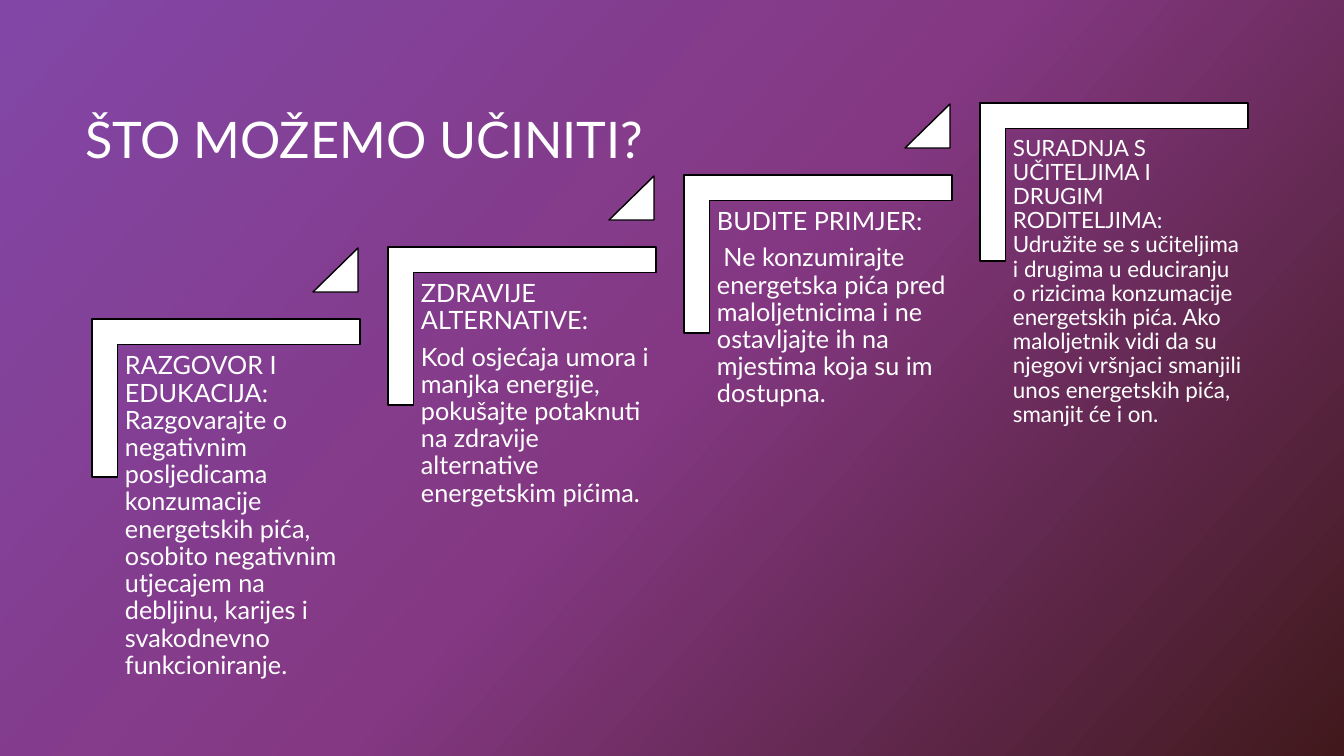
from copy import deepcopy

from pptx import Presentation
from pptx.dml.color import RGBColor
from pptx.enum.shapes import MSO_SHAPE
from pptx.enum.text import MSO_ANCHOR, MSO_AUTO_SIZE, PP_ALIGN
from pptx.oxml.ns import qn
from pptx.util import Pt

CORNER, TRIANGLE = MSO_SHAPE.CORNER, MSO_SHAPE.ISOSCELES_TRIANGLE
LEFT = PP_ALIGN.LEFT
TOP, MIDDLE = MSO_ANCHOR.TOP, MSO_ANCHOR.MIDDLE
NO_FIT = MSO_AUTO_SIZE.NONE

PX = 9144000 / 1008  # EMU in one px
COLOURS = {"violet": "8247A6", "plum": "843883", "maroon": "41191C",
           "white": "FFFFFF", "black": "000000"}
RGB = {name: RGBColor.from_string(value) for name, value in COLOURS.items()}


def px(*lengths):
    return [round(length * PX) for length in lengths]


def write(box, texts, size, anchor, inset):
    frame = box.text_frame
    side, edge = px(*inset)
    frame_format = {"word_wrap": True, "auto_size": NO_FIT, "vertical_anchor": anchor,
                    "margin_left": side, "margin_right": side,
                    "margin_top": edge, "margin_bottom": edge}
    for name, value in frame_format.items():
        setattr(frame, name, value)
    for index, text in enumerate(texts):
        para = frame.add_paragraph() if index else frame.paragraphs[0]
        para_format = {"alignment": LEFT, "line_spacing": 0.9,
                       "space_before": Pt(0), "space_after": Pt(size * 0.35)}
        for name, value in para_format.items():
            setattr(para, name, value)
        span = para.add_run()
        span.text = text
        for name, value in {"name": "Lato", "size": Pt(size), "bold": False}.items():
            setattr(span.font, name, value)
        span.font.color.rgb = RGB["white"]


deck = Presentation()
deck.slide_width, deck.slide_height = px(1344, 756)
page = deck.slides.add_slide(deck.slide_layouts[5])

# Background: three-stop diagonal gradient
backdrop = page.background.fill
backdrop.gradient()
backdrop.gradient_angle = 360 - 42
stop_list = page.element.find(".//" + qn("a:gsLst"))
stop_list.insert(1, deepcopy(stop_list[0]))
for stop, position, colour in zip(backdrop.gradient_stops, (0, 0.5, 1),
                                  ("violet", "plum", "maroon")):
    stop.position = position
    stop.color.rgb = RGB[colour]

# Title
title = page.shapes.title
title.left, title.top, title.width, title.height = px(75, 83, 1059, 119)
write(title, ["ŠTO MOŽEMO UČINITI?"], 36, MIDDLE, (10, 5))

# Rising steps: text size and paragraphs
steps = [
    (18, ["RAZGOVOR I EDUKACIJA: Razgovarajte o negativnim posljedicama konzumacije "
          "energetskih pića, osobito negativnim utjecajem na debljinu, karijes i "
          "svakodnevno funkcioniranje."]),
    (18, ["ZDRAVIJE ALTERNATIVE:",
          "Kod osjećaja umora i manjka energije, pokušajte potaknuti na zdravije "
          "alternative energetskim pićima."]),
    (18, ["BUDITE PRIMJER:",
          " Ne konzumirajte energetska pića pred maloljetnicima i ne ostavljajte ih "
          "na mjestima koja su im dostupna."]),
    (16, ["SURADNJA S UČITELJIMA I DRUGIM RODITELJIMA: Udružite se s učiteljima i "
          "drugima u educiranju o rizicima konzumacije energetskih pića. Ako "
          "maloljetnik vidi da su njegovi vršnjaci smanjili unos energetskih pića, "
          "smanjit će i on."]),
]
STEP_RIGHT, STEP_UP = 296, 72

for index, (size, texts) in enumerate(steps):
    right, up = index * STEP_RIGHT, index * STEP_UP

    # Corner bracket, and a triangle pointing to the next step
    marks = [(CORNER, (147, 264, 158, 268), 90, (0.161, 0.161))]
    if index < len(steps) - 1:
        marks.append((TRIANGLE, (313, 248, 45, 44), 0, (1,)))
    for kind, (left, top, width, height), turn, adjustments in marks:
        mark = page.shapes.add_shape(kind, *px(left + right, top - up, width, height))
        mark.rotation = turn
        for number, value in enumerate(adjustments):
            mark.adjustments[number] = value
        mark.shadow.inherit = False
        mark.fill.solid()
        mark.fill.fore_color.rgb = RGB["white"]
        mark.line.color.rgb = RGB["black"]
        mark.line.width = Pt(1)

    # Step text
    box = page.shapes.add_textbox(*px(118 + right, 346 - up, 243, 208))
    write(box, texts, size, TOP, (7, 7))

deck.save("out.pptx")
